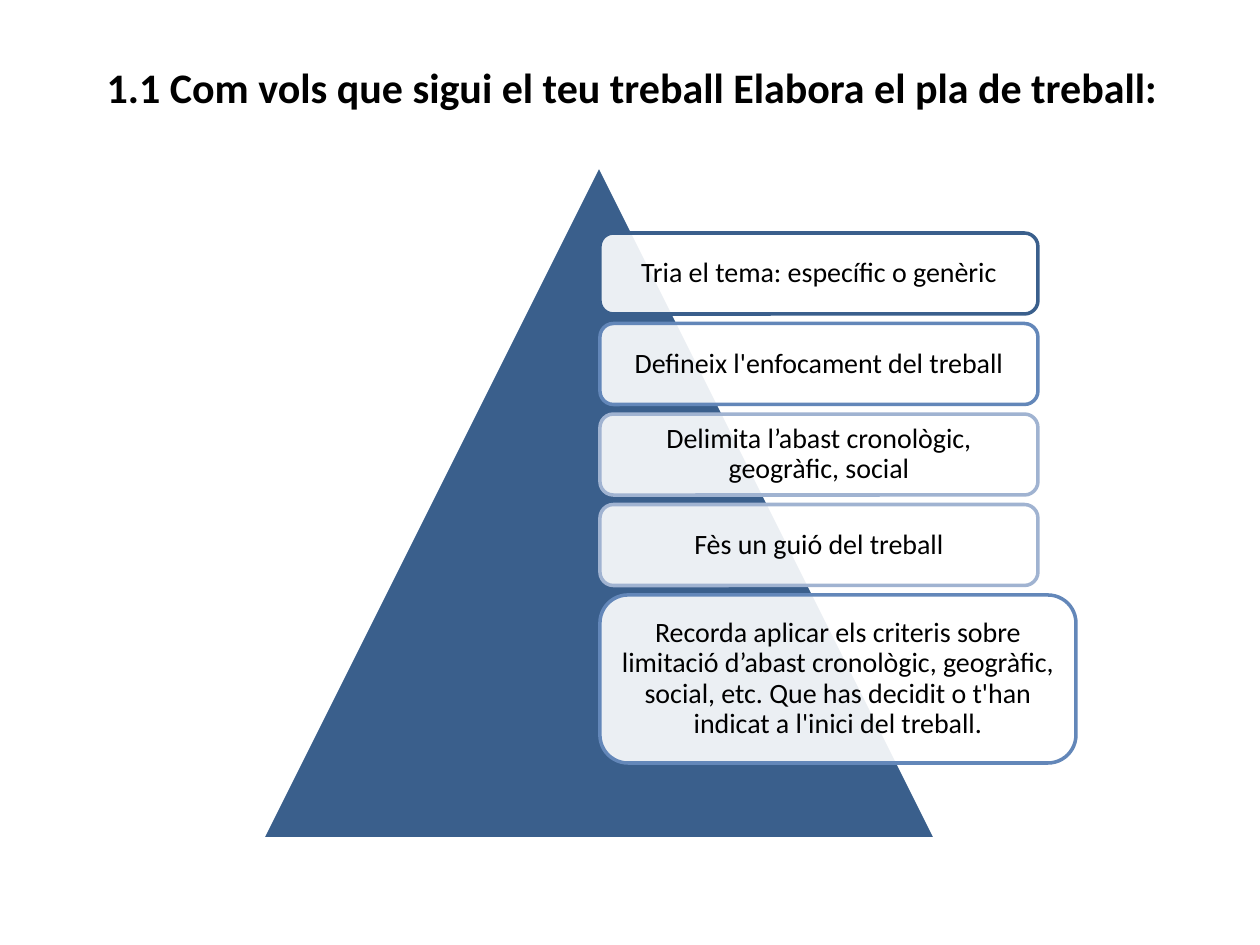
from dataclasses import dataclass

from lxml.etree import SubElement
from pptx import Presentation
from pptx.dml.color import RGBColor
from pptx.enum.shapes import MSO_SHAPE
from pptx.enum.text import MSO_ANCHOR, MSO_AUTO_SIZE, PP_ALIGN
from pptx.oxml.ns import qn
from pptx.util import Pt

TITLE = "1.1 Com vols que sigui el teu treball Elabora el pla de treball:"


@dataclass(frozen=True)
class Theme:
    font: str = "Calibri"
    title_size: int = 24
    body_size: int = 16
    line_width: int = 2
    text: str = "000000"
    white: str = "FFFFFF"
    dark: str = "3A5F8C"
    medium: str = "6387B9"
    light: str = "A0B3D1"
    card_opacity: int = 90


THEME = Theme()
STEPS = [
    ("Tria el tema: específic o genèric", THEME.dark),
    ("Defineix l'enfocament del treball", THEME.medium),
    ("Delimita l’abast cronològic, geogràfic, social", THEME.light),
    ("Fès un guió del treball", THEME.light),
    ("Recorda aplicar els criteris sobre limitació d’abast cronològic, "
     "geogràfic, social, etc. Que has decidit o t'han indicat a l'inici "
     "del treball.", THEME.medium),
]

PIXELS_PER_INCH = 126
SLIDE_SIZE = (1260, 945)
TITLE_BOX = (94, 55, 1101, 63)
PYRAMID_BOX = (262, 165, 674, 674)
CARD_LEFT, FIRST_TOP, LAST_TOP = 600, 233, 595
CARD_SIZE = (438, 81)
LAST_CARD_SIZE = (476, 168)
CARD_INSET = 9


def px(value):
    return round(value * 914400 / PIXELS_PER_INCH)


def format_text(paragraph, size, bold=False):
    for run in paragraph.runs:
        run.font.name = THEME.font
        run.font.size = Pt(size)
        run.font.bold = bold
        run.font.color.rgb = RGBColor.from_string(THEME.text)


def add_title(slide):
    title = slide.shapes.title
    title.left, title.top, title.width, title.height = map(px, TITLE_BOX)
    frame = title.text_frame
    frame.text = TITLE
    frame.word_wrap = True
    frame.auto_size = MSO_AUTO_SIZE.SHAPE_TO_FIT_TEXT
    frame.vertical_anchor = MSO_ANCHOR.TOP
    paragraph = frame.paragraphs[0]
    paragraph.alignment = PP_ALIGN.LEFT
    format_text(paragraph, THEME.title_size, bold=True)


def add_outlined_shape(slide, kind, box, fill, line):
    shape = slide.shapes.add_shape(kind, *map(px, box))
    shape.shadow.inherit = False
    shape.fill.solid()
    shape.fill.fore_color.rgb = RGBColor.from_string(fill)
    shape.line.color.rgb = RGBColor.from_string(line)
    shape.line.width = Pt(THEME.line_width)
    return shape


def set_opacity(shape, percent):
    color = shape.fill._xPr.find(qn("a:solidFill")).find(qn("a:srgbClr"))
    SubElement(color, qn("a:alpha"), val=str(percent * 1000))


def add_card(slide, box, text, line):
    card = add_outlined_shape(slide, MSO_SHAPE.ROUNDED_RECTANGLE, box, THEME.white, line)
    set_opacity(card, THEME.card_opacity)
    frame = card.text_frame
    frame.text = text
    frame.word_wrap = True
    frame.vertical_anchor = MSO_ANCHOR.MIDDLE
    frame.margin_left = frame.margin_right = px(CARD_INSET)
    frame.margin_top = frame.margin_bottom = px(CARD_INSET)
    paragraph = frame.paragraphs[0]
    paragraph.alignment = PP_ALIGN.CENTER
    paragraph.line_spacing = 0.9
    format_text(paragraph, THEME.body_size)


def main():
    presentation = Presentation()
    presentation.slide_width, presentation.slide_height = map(px, SLIDE_SIZE)
    slide = presentation.slides.add_slide(presentation.slide_layouts[5])
    add_title(slide)
    add_outlined_shape(slide, MSO_SHAPE.ISOSCELES_TRIANGLE, PYRAMID_BOX, THEME.dark, THEME.white)

    last = len(STEPS) - 1
    pitch = (LAST_TOP - FIRST_TOP) / last
    for index, (text, line) in enumerate(STEPS):
        size = LAST_CARD_SIZE if index == last else CARD_SIZE
        add_card(slide, (CARD_LEFT, FIRST_TOP + index * pitch, *size), text, line)
    presentation.save("out.pptx")


if __name__ == "__main__":
    main()
